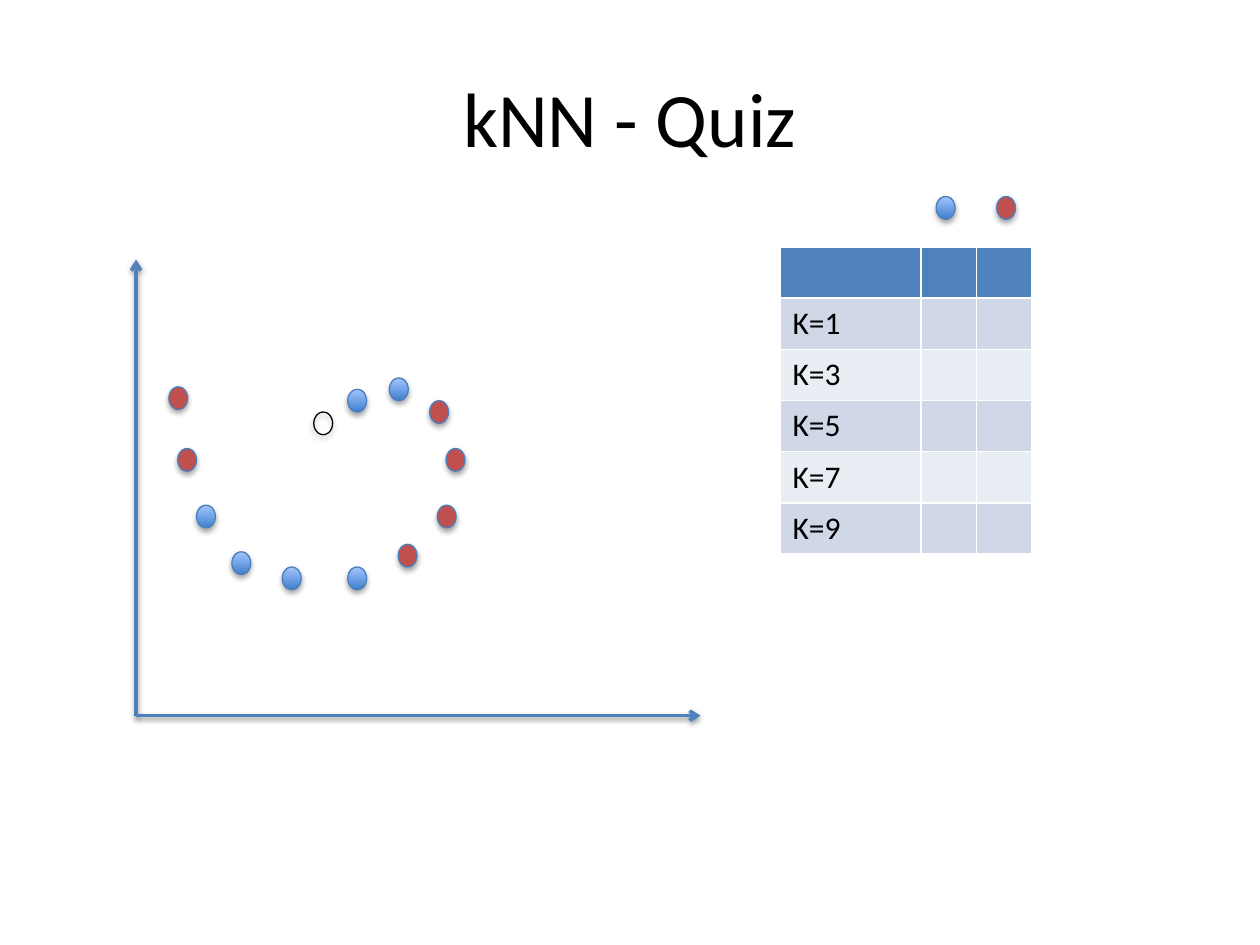
from lxml import etree
from pptx import Presentation
from pptx.dml.color import RGBColor
from pptx.enum.shapes import MSO_CONNECTOR, MSO_SHAPE
from pptx.enum.text import MSO_ANCHOR, PP_ALIGN
from pptx.oxml import parse_xml
from pptx.oxml.ns import nsdecls, qn
from pptx.util import Inches, Pt

STRAIGHT = MSO_CONNECTOR.STRAIGHT
OVAL = MSO_SHAPE.OVAL
MIDDLE = MSO_ANCHOR.MIDDLE
CENTER = PP_ALIGN.CENTER

FONT = "Calibri"
BLACK, RED, ACCENT, OUTLINE = "000000", "C0504D", "4F81BD", "4B7EBC"
BLUE = ("3F80CE", "A4C4FF")
BANDS = ("D0D8E8", "E9EDF4")

ORIGIN = (1.08, 5.68)
AXIS_ENDS = [(1.08, 2.06), (5.56, 5.68)]
BLUE_POINTS = [(1.56, 4.01), (2.24, 4.5), (1.84, 4.38),
               (3.09, 3), (2.76, 3.09), (2.76, 4.5)]
RED_POINTS = [(1.41, 3.56), (1.34, 3.07), (3.16, 4.32),
              (3.47, 4.01), (3.41, 3.18), (3.54, 3.56)]
QUERY_POINT = (2.49, 3.27)
BLUE_KEY, RED_KEY = (7.43, 1.56), (7.91, 1.56)
K_VALUES = range(1, 10, 2)


def rgb(color):
    return RGBColor.from_string(color)


def set_font(p, size):
    p.font.name = FONT
    p.font.size = Pt(size)
    p.font.color.rgb = rgb(BLACK)


def add_shadow(shape, alpha, distance):
    """Cast a soft black shadow downwards; alpha in percent, distance in points."""
    shape._element.spPr.append(parse_xml(
        f'<a:effectLst {nsdecls("a")}>'
        f'<a:outerShdw blurRad="{Pt(3.1)}" dist="{Pt(distance)}" '
        'dir="5400000" rotWithShape="0">'
        f'<a:srgbClr val="{BLACK}"><a:alpha val="{alpha * 1000}"/></a:srgbClr>'
        '</a:outerShdw></a:effectLst>'))


def add_title(s, text):
    sp = s.shapes.title
    sp.left, sp.top = Inches(0.5), Inches(0.3)
    sp.width, sp.height = Inches(9), Inches(1.25)
    tf = sp.text_frame
    tf.text = text
    tf.vertical_anchor = MIDDLE
    p = tf.paragraphs[0]
    p.alignment = CENTER
    set_font(p, 44)


def add_axis(s, end):
    axis = s.shapes.add_connector(
        STRAIGHT, *(Inches(v) for v in (*ORIGIN, *end)))
    axis.line.color.rgb = rgb(ACCENT)
    axis.line.width = Pt(2)
    etree.SubElement(axis.line._get_or_add_ln(), qn("a:tailEnd"), type="arrow")
    add_shadow(axis, 38, 1.6)


def add_point(s, position, color=None, outline=OUTLINE):
    """Add a data point; color is a hex string, a (bottom, top) pair or None."""
    x, y = position
    sp = s.shapes.add_shape(
        OVAL, Inches(x), Inches(y), Inches(0.15), Inches(0.18))
    if color is None:
        sp.fill.background()
    elif isinstance(color, tuple):
        sp.fill.gradient()
        sp.fill.gradient_angle = 90
        for stop, shade in zip(sp.fill.gradient_stops, color):
            stop.color.rgb = rgb(shade)
    else:
        sp.fill.solid()
        sp.fill.fore_color.rgb = rgb(color)
    sp.line.color.rgb = rgb(outline)
    sp.line.width = Pt(0.75)
    add_shadow(sp, 35, 1.8)


def add_answer_table(s):
    rows = len(K_VALUES) + 1
    table = s.shapes.add_table(rows, 3, Inches(6.19), Inches(1.96),
                               Inches(2), Inches(2.44)).table
    for column, width in zip(table.columns, (1.12, 0.44, 0.44)):
        column.width = Inches(width)
    for i, row in enumerate(table.rows):
        for cell in row.cells:
            cell.fill.solid()
            cell.fill.fore_color.rgb = rgb(BANDS[(i - 1) % 2] if i else ACCENT)
    for i, k in enumerate(K_VALUES, start=1):
        cell = table.cell(i, 0)
        cell.text = f"K={k}"
        set_font(cell.text_frame.paragraphs[0], 18)


def main():
    prs = Presentation()
    prs.slide_width, prs.slide_height = Inches(10), Inches(7.5)
    s = prs.slides.add_slide(prs.slide_layouts[5])
    add_title(s, "kNN - Quiz")
    for end in AXIS_ENDS:
        add_axis(s, end)
    for position in BLUE_POINTS:
        add_point(s, position, BLUE)
    for position in RED_POINTS:
        add_point(s, position, RED)
    add_point(s, QUERY_POINT, outline=BLACK)
    add_answer_table(s)
    add_point(s, BLUE_KEY, BLUE)
    add_point(s, RED_KEY, RED)
    prs.save("out.pptx")


if __name__ == "__main__":
    main()
